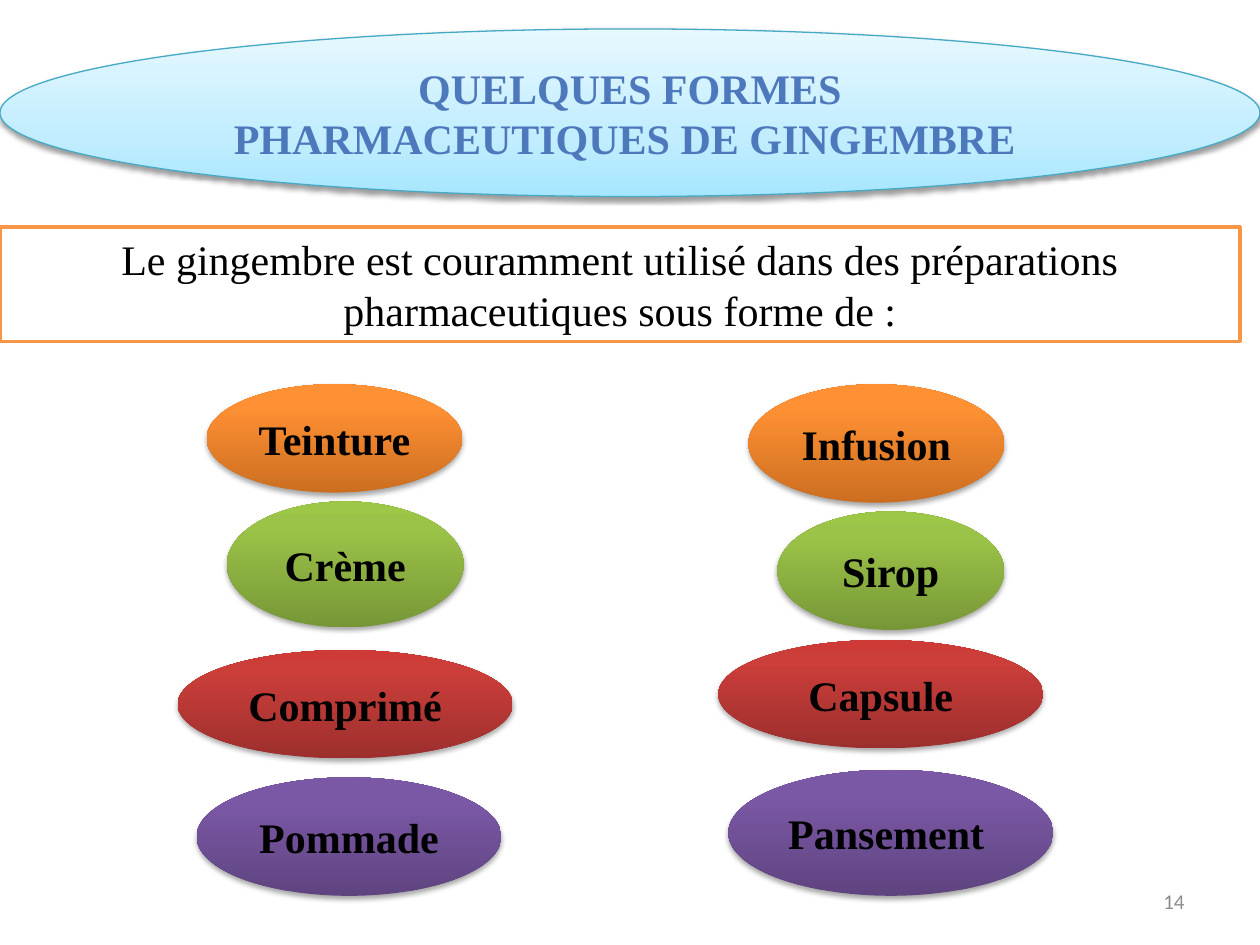
from lxml import etree
from pptx import Presentation
from pptx.dml.color import RGBColor
from pptx.enum.shapes import MSO_SHAPE
from pptx.enum.text import MSO_ANCHOR, PP_ALIGN
from pptx.oxml.ns import qn
from pptx.util import Inches, Pt

OVAL, RECTANGLE = MSO_SHAPE.OVAL, MSO_SHAPE.RECTANGLE
MIDDLE = MSO_ANCHOR.MIDDLE
LEFT, CENTER, RIGHT = PP_ALIGN.LEFT, PP_ALIGN.CENTER, PP_ALIGN.RIGHT
SERIF = "Times New Roman"

COLORS = {
    "black": "000000",
    "white": "FFFFFF",
    "title": "4D79BC",
    "title_line": "46AAC5",
    "intro_line": "F79646",
    "number": "8C8C8C",
}
GRADIENTS = {
    "sky": ((0, "A7E6FF"), (35, "C1EDFF"), (100, "E7F8FF")),
    "orange": ((0, "CC6E20"), (80, "FF9034"), (100, "FF9136")),
    "green": ((0, "779737"), (80, "9BC348"), (100, "9DC746")),
    "red": ((0, "9C2F2D"), (80, "CB3E3A"), (100, "CE3B37")),
    "purple": ((0, "5F4480"), (80, "7B58A6"), (100, "7C57A8")),
}
FORMS = [
    ("Teinture", "orange", (1.64, 3.05, 2.03, 0.86), CENTER),
    ("Capsule", "red", (5.7, 5.08, 2.58, 0.86), CENTER),
    ("Infusion", "orange", (5.94, 3.05, 2.03, 0.94), CENTER),
    ("Sirop", "green", (6.17, 4.06, 1.8, 0.94), CENTER),
    ("Comprimé", "red", (1.41, 5.16, 2.66, 0.86), CENTER),
    ("Pommade", "purple", (1.56, 6.17, 2.42, 0.94), CENTER),
    ("Pansement", "purple", (5.78, 6.11, 2.58, 1), LEFT),
    ("Crème", "green", (1.8, 3.98, 1.88, 1), CENTER),
]


def rgb(name):
    """Return the named colour."""
    return RGBColor.from_string(COLORS[name])


def add_color(parent, value, alpha=None):
    """Append an RGB colour element, with an optional opacity in percent."""
    color = etree.SubElement(parent, qn("a:srgbClr"), val=value)
    if alpha is not None:
        etree.SubElement(color, qn("a:alpha"), val=str(alpha * 1000))


def set_gradient(shape, stops):
    """Fill a shape with a gradient rising from its bottom edge."""
    shape.fill.gradient()
    shape.fill.gradient_angle = 90
    stop_list = shape.element.spPr.find(qn("a:gradFill")).find(qn("a:gsLst"))
    for stop in list(stop_list):
        stop_list.remove(stop)
    for position, value in stops:
        stop = etree.SubElement(stop_list, qn("a:gs"), pos=str(position * 1000))
        add_color(stop, value)


def set_shadow(shape, alpha, distance):
    """Give a shape a soft black shadow that falls straight down."""
    effects = shape.element.spPr.find(qn("a:effectLst"))
    shadow = etree.SubElement(
        effects, qn("a:outerShdw"), blurRad=str(Pt(3.1)), dist=str(Pt(distance)),
        dir="5400000", rotWithShape="0")
    add_color(shadow, COLORS["black"], alpha)


def set_line(shape, color, width):
    """Outline a shape."""
    shape.line.color.rgb = rgb(color)
    shape.line.width = Pt(width)


def set_text(shape, text, align=CENTER, color="black", size=24, font=SERIF, bold=False):
    """Write one paragraph, centred vertically."""
    frame = shape.text_frame
    frame.word_wrap = True
    frame.vertical_anchor = MIDDLE
    paragraph = frame.paragraphs[0]
    paragraph.text = text
    paragraph.alignment = align
    paragraph.font.name = font
    paragraph.font.size = Pt(size)
    paragraph.font.bold = bold
    paragraph.font.color.rgb = rgb(color)


def add_shape(slide, kind, box):
    """Add a preset shape without a theme shadow."""
    shape = slide.shapes.add_shape(kind, *map(Inches, box))
    shape.shadow.inherit = False
    return shape


def add_title(slide, text):
    """Add the wide oval with the slide title."""
    shape = add_shape(slide, OVAL, (0, 0.23, 10, 1.33))
    set_gradient(shape, GRADIENTS["sky"])
    set_line(shape, "title_line", 0.75)
    set_shadow(shape, 38, 1.6)
    set_text(shape, text, color="title", bold=True)


def add_intro(slide, text):
    """Add the framed introduction."""
    shape = add_shape(slide, RECTANGLE, (0, 1.8, 9.84, 0.91))
    shape.fill.solid()
    shape.fill.fore_color.rgb = rgb("white")
    set_line(shape, "intro_line", 2)
    set_text(shape, text)


def add_form(slide, text, gradient, box, align):
    """Add an oval that names one pharmaceutical form."""
    shape = add_shape(slide, OVAL, box)
    set_gradient(shape, GRADIENTS[gradient])
    shape.line.fill.background()
    set_shadow(shape, 35, 1.8)
    set_text(shape, text, align, bold=True)


def add_slide_number(slide, text):
    """Add the slide number at the bottom right."""
    box = slide.shapes.add_textbox(*map(Inches, (7.17, 6.95, 2.33, 0.4)))
    set_text(box, text, RIGHT, "number", 12, "Calibri")


def main():
    """Build and save the slide."""
    presentation = Presentation()
    presentation.slide_width = Inches(10)
    presentation.slide_height = Inches(7.5)
    slide = presentation.slides.add_slide(presentation.slide_layouts[6])
    add_slide_number(slide, "14")
    add_title(slide, "QUELQUES FORMES PHARMACEUTIQUES DE GINGEMBRE ")
    add_intro(slide, "Le gingembre est couramment utilisé dans des préparations "
                     "pharmaceutiques sous forme de :")
    for form in FORMS:
        add_form(slide, *form)
    presentation.save("out.pptx")


if __name__ == "__main__":
    main()
